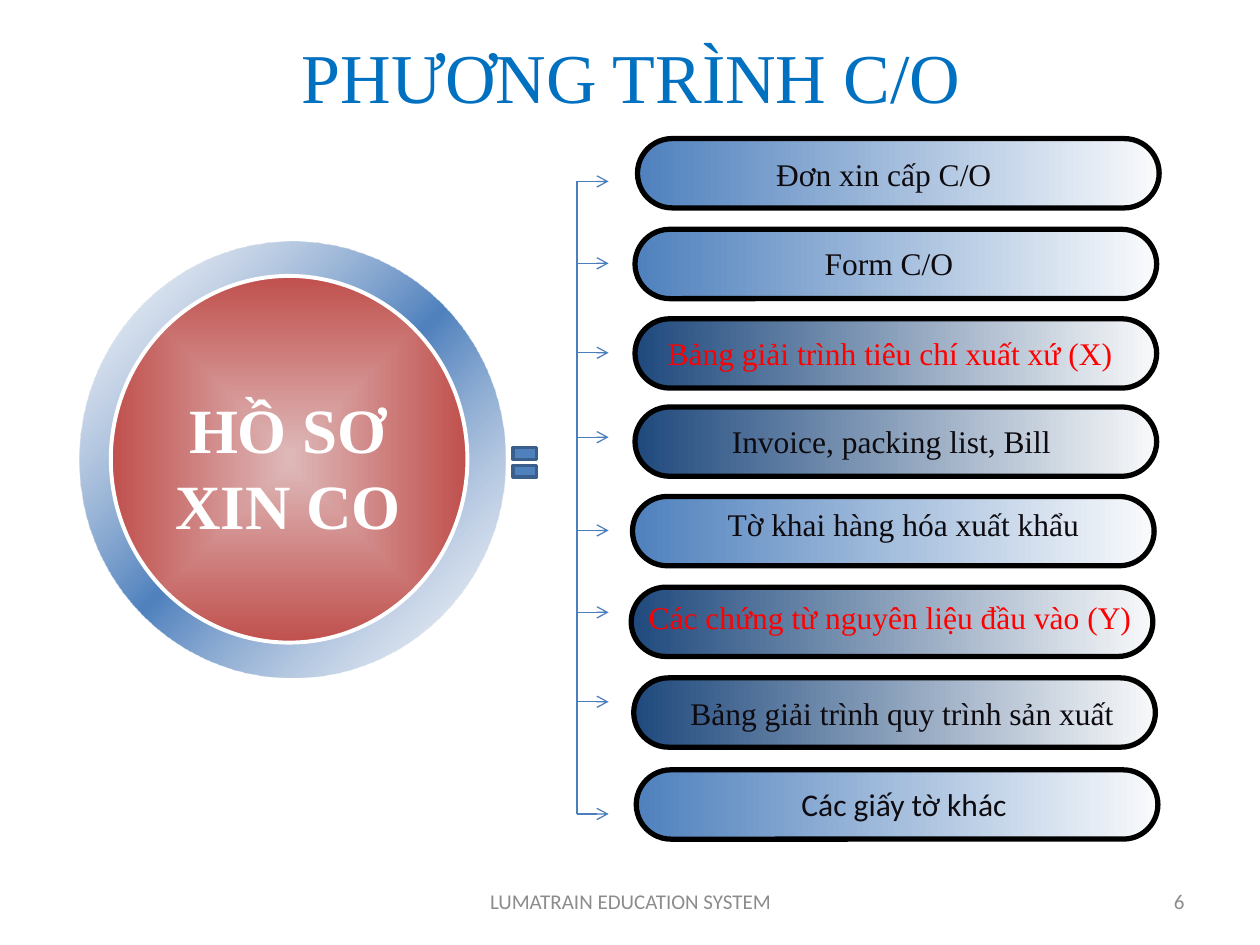
"""Build the slide that lists the documents of a C/O application."""
from dataclasses import dataclass

from lxml import etree
from pptx import Presentation
from pptx.dml.color import RGBColor
from pptx.enum.shapes import MSO_CONNECTOR, MSO_SHAPE
from pptx.enum.text import MSO_ANCHOR, PP_ALIGN
from pptx.oxml import parse_xml
from pptx.oxml.ns import qn
from pptx.shapes.autoshape import Shape
from pptx.shapes.connector import Connector
from pptx.slide import Slide
from pptx.util import Inches, Pt

STRAIGHT = MSO_CONNECTOR.STRAIGHT
DONUT, OVAL = MSO_SHAPE.DONUT, MSO_SHAPE.OVAL
PILL, EQUALS = MSO_SHAPE.ROUNDED_RECTANGLE, MSO_SHAPE.MATH_EQUAL
CENTER, RIGHT = PP_ALIGN.CENTER, PP_ALIGN.RIGHT
TOP, MIDDLE = MSO_ANCHOR.TOP, MSO_ANCHOR.MIDDLE

DRAWING_NS = "http://schemas.openxmlformats.org/drawingml/2006/main"
SERIF, SANS = "Times New Roman", "Calibri"
COLORS = {
    "title": "0070C0", "ink": "0D0A10", "alert": "FF0000", "footer": "8C8C8C",
    "white": "FFFFFF", "black": "000000", "blue": "4F81BD", "navy": "1F497D",
    "blue_fade": "F9FAFC", "navy_fade": "F8F9FA", "ring_edge": "B1C0DA",
    "core": "DEB8B8", "red": "C0504D", "equals_line": "3A5F8C", "arrow": "4B7EBC",
}
LINEAR = '<a:lin ang="{}" scaled="0"/>'
FROM_CENTER = '<a:path path="shape"><a:fillToRect l="50000" t="50000" r="50000" b="50000"/></a:path>'

PILL_WIDTH, PILL_HEIGHT = 4.14, 0.55
TRUNK_X, ARROW_X = 4.58, 4.83


@dataclass(frozen=True)
class Document:
    """One required document: its pill, label box and arrow height."""
    label: str
    left: float
    top: float
    label_left: float
    label_top: float
    label_width: float
    arrow_y: float
    shade: str = "blue"
    ink: str = "ink"
    font: str = SERIF


DOCUMENTS = [
    Document("Đơn xin cấp C/O", 5.06, 1.1, 6.05, 1.18, 1.93, 1.44),
    Document("Form C/O", 5.04, 1.82, 6.44, 1.89, 1.23, 2.09),
    Document("Bảng giải trình tiêu chí xuất xứ (X)", 5.04, 2.53, 5.18, 2.6, 3.77, 2.8, "navy", "alert"),
    Document("Invoice, packing list, Bill", 5.04, 3.23, 5.42, 3.3, 3.31, 3.47, "navy"),
    Document("Tờ khai hàng hóa xuất khẩu", 5.02, 3.94, 5.62, 3.96, 3.1, 4.21),
    Document("Các chứng từ nguyên liệu đầu vào (Y)", 5.01, 4.66, 5.03, 4.7, 4.07, 4.86, "navy", "alert"),
    Document("Bảng giải trình quy trình sản xuất", 5.03, 5.38, 5.37, 5.46, 3.58, 5.57, "navy"),
    Document("Các giấy tờ khác", 5.05, 6.11, 6.25, 6.18, 1.85, 6.46, font=SANS),
]


def rgb(color: str) -> RGBColor:
    """Look up a named colour."""
    return RGBColor.from_string(COLORS[color])


def add_text(slide: Slide, text: str, left: float, top: float, width: float, height: float, *,
             size: float = 18, color: str = "ink", font: str = SERIF, bold: bool = False,
             align: PP_ALIGN = CENTER, anchor: MSO_ANCHOR = TOP, wrap: bool = True,
             shadow: bool = False) -> None:
    """Add a text box with one formatted paragraph."""
    frame = slide.shapes.add_textbox(Inches(left), Inches(top), Inches(width), Inches(height)).text_frame
    frame.word_wrap = wrap
    frame.vertical_anchor = anchor
    paragraph = frame.paragraphs[0]
    paragraph.alignment = align
    run = paragraph.add_run()
    run.text = text
    run.font.size, run.font.name, run.font.bold = Pt(size), font, bold
    run.font.color.rgb = rgb(color)
    if shadow:
        run.font.fill._xPr.find(qn("a:solidFill")).addnext(parse_xml(
            f'<a:effectLst xmlns:a="{DRAWING_NS}"><a:outerShdw blurRad="38100" dist="38100" dir="2700000">'
            f'<a:srgbClr val="{COLORS["black"]}"/></a:outerShdw></a:effectLst>'))


def add_outline(slide: Slide, preset: MSO_SHAPE, left: float, top: float, width: float, height: float, *,
                fill: str = "blue", line: str | None = None, weight: float = 1) -> Shape:
    """Add a flat preset shape."""
    shape = slide.shapes.add_shape(preset, Inches(left), Inches(top), Inches(width), Inches(height))
    shape.shadow.inherit = False
    shape.fill.solid()
    shape.fill.fore_color.rgb = rgb(fill)
    if line:
        shape.line.color.rgb = rgb(line)
        shape.line.width = Pt(weight)
    else:
        shape.line.fill.background()
    return shape


def set_gradient(shape: Shape, stops: list[tuple[int, str, int]], direction: str) -> None:
    """Replace a solid fill by stops of position, colour and opacity in percent."""
    stop_xml = "".join(
        f'<a:gs pos="{position * 1000}"><a:srgbClr val="{COLORS[color]}">'
        f'<a:alpha val="{opacity * 1000}"/></a:srgbClr></a:gs>'
        for position, color, opacity in stops)
    properties = shape._element.spPr
    properties.replace(properties.find(qn("a:solidFill")), parse_xml(
        f'<a:gradFill xmlns:a="{DRAWING_NS}" rotWithShape="1"><a:gsLst>{stop_xml}</a:gsLst>{direction}</a:gradFill>'))


def add_line(slide: Slide, x1: float, y1: float, x2: float, y2: float) -> Connector:
    """Add a thin straight connector without a shadow."""
    connector = slide.shapes.add_connector(STRAIGHT, Inches(x1), Inches(y1), Inches(x2), Inches(y2))
    connector.line.color.rgb = rgb("arrow")
    connector.line.width = Pt(0.75)
    etree.SubElement(connector._element.spPr, qn("a:effectLst"))
    return connector


def add_document(slide: Slide, document: Document) -> None:
    """Draw a document's pill, label and arrow."""
    pill = add_outline(slide, PILL, document.left, document.top, PILL_WIDTH, PILL_HEIGHT,
                       line="black", weight=3)
    pill.adjustments[0] = 0.5
    set_gradient(pill, [(0, document.shade, 100), (100, f"{document.shade}_fade", 100)], LINEAR.format(0))
    add_text(slide, document.label, document.label_left, document.label_top, document.label_width, 0.4,
             color=document.ink, font=document.font, wrap=False)
    arrow = add_line(slide, TRUNK_X, document.arrow_y, ARROW_X, document.arrow_y)
    etree.SubElement(arrow.line._get_or_add_ln(), qn("a:tailEnd"), type="arrow")


def add_result(slide: Slide) -> None:
    """Draw the ringed circle and the equals sign."""
    ring = add_outline(slide, DONUT, 0.63, 1.92, 3.38, 3.46)
    ring.adjustments[0] = 0.09
    set_gradient(ring, [(0, "ring_edge", 12), (50, "blue", 100), (100, "ring_edge", 12)],
                 LINEAR.format(45 * 60000))
    core = add_outline(slide, OVAL, 0.88, 2.19, 2.83, 2.91, line="white", weight=2.25)
    set_gradient(core, [(0, "core", 100), (100, "red", 100)], FROM_CENTER)
    add_text(slide, "HỒ SƠ XIN CO", 1.08, 3.05, 2.41, 1.31, size=36, color="white", bold=True, shadow=True)
    add_outline(slide, EQUALS, 4.04, 3.47, 0.25, 0.4, line="equals_line", weight=2)


def main() -> None:
    """Build and save the slide."""
    deck = Presentation()
    deck.slide_width, deck.slide_height = Inches(10), Inches(7.5)
    slide = deck.slides.add_slide(deck.slide_layouts[6])
    add_text(slide, "PHƯƠNG TRÌNH C/O", 0.51, 0.12, 9, 0.96, size=40, color="title", anchor=MIDDLE)
    add_result(slide)
    add_line(slide, TRUNK_X, DOCUMENTS[0].arrow_y, TRUNK_X, DOCUMENTS[-1].arrow_y)
    for document in DOCUMENTS:
        add_document(slide, document)
    footer = {"size": 12, "color": "footer", "font": SANS, "anchor": MIDDLE}
    add_text(slide, "LUMATRAIN EDUCATION SYSTEM", 3.42, 6.95, 3.17, 0.4, **footer)
    add_text(slide, "6", 7.17, 6.95, 2.33, 0.4, align=RIGHT, **footer)
    deck.save("out.pptx")


if __name__ == "__main__":
    main()
